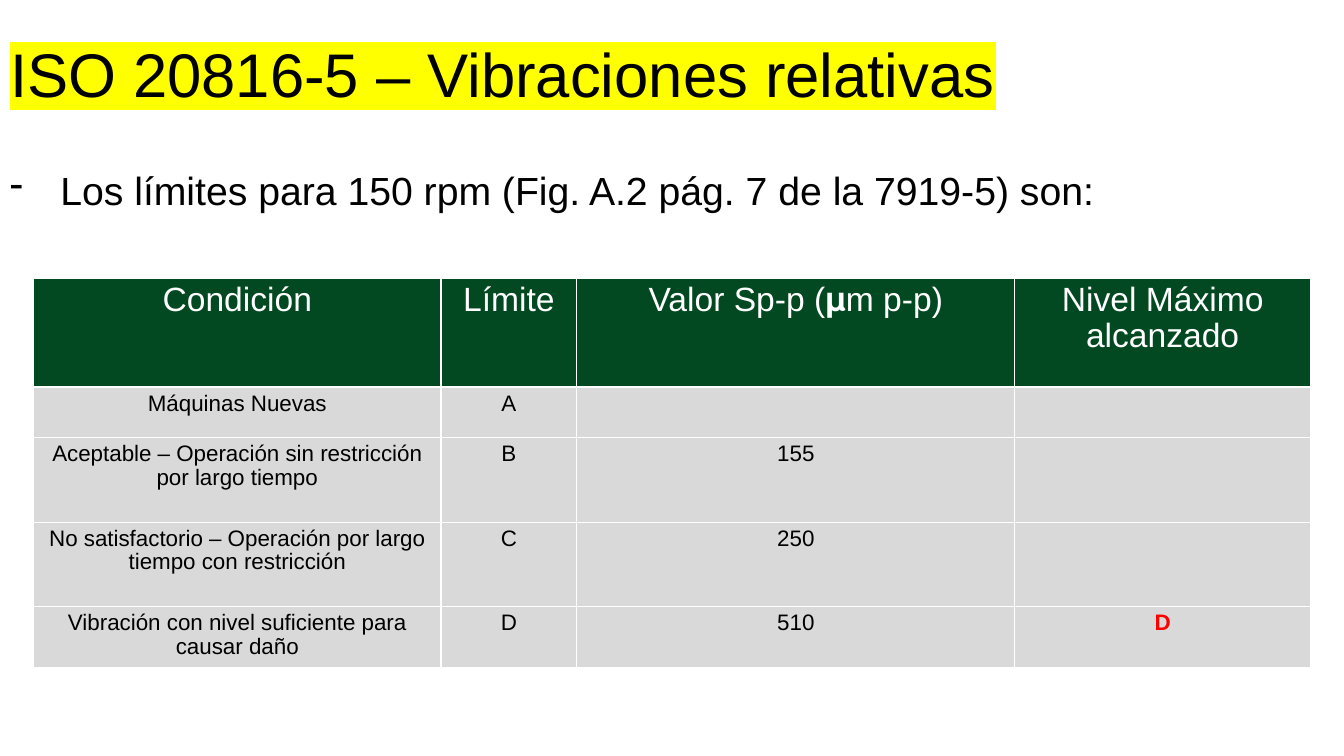
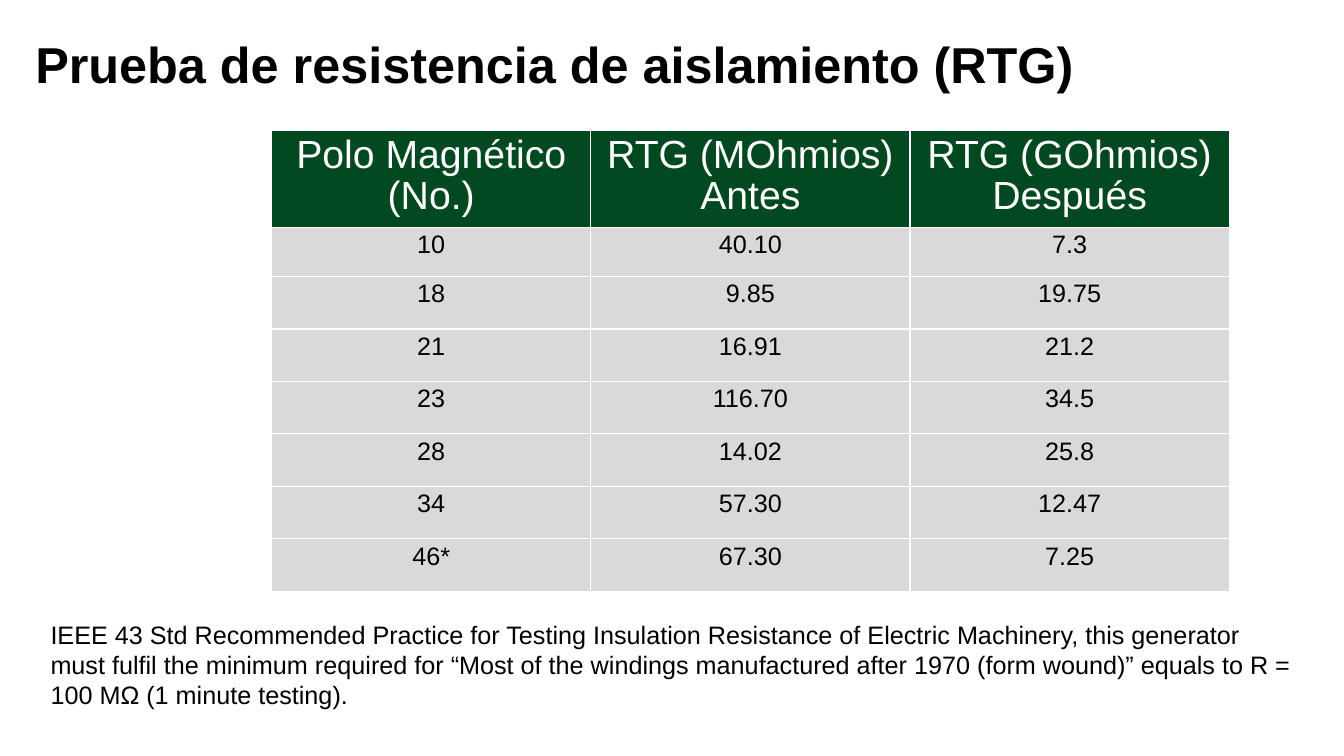
from dataclasses import dataclass

from lxml import etree
from pptx import Presentation
from pptx.dml.color import RGBColor
from pptx.enum import text as t
from pptx.oxml import ns
from pptx.util import Pt


@dataclass(frozen=True)
class Theme:
    font: str = "Arial"
    ink: str = "000000"
    paper: str = "FFFFFF"
    header: str = "024921"
    body: str = "D9D9D9"
    alert: str = "FF0000"
    marker: str = "FFFF00"
    title_size: int = 44
    subtitle_size: int = 36
    lead_size: int = 28
    header_size: int = 24
    note_size: int = 18
    cell_size: int = 16
    border: float = 1


THEME = Theme()


# Text helpers
def add_xml(parent, tag, **attributes):
    return etree.SubElement(parent, ns.qn(tag), attributes)


def style(paragraph, size, color=THEME.ink, bold=False, **formats):
    """Format every run of a paragraph, then the paragraph itself."""
    for run in paragraph.runs:
        for name, value in dict(name=THEME.font, size=Pt(size), bold=bold).items():
            setattr(run.font, name, value)
        run.font.color.rgb = RGBColor.from_string(color)
    for name, value in formats.items():
        setattr(paragraph, name, value)


def place(shape, left, top, width, height):
    for name, value in dict(left=left, top=top, width=width, height=height).items():
        setattr(shape, name, Pt(value))


def add_title(slide, wording, box, size, bold=False, marker=None):
    title = slide.shapes.title
    place(title, *box)
    frame = title.text_frame
    frame.text = wording
    frame.auto_size = t.MSO_AUTO_SIZE.NONE
    frame.vertical_anchor = t.MSO_ANCHOR.MIDDLE
    line = frame.paragraphs[0]
    style(line, size, bold=bold, alignment=t.PP_ALIGN.LEFT)
    if marker:
        fill = line.runs[0].font._element.find(ns.qn("a:solidFill"))
        highlight = etree.Element(ns.qn("a:highlight"))
        add_xml(highlight, "a:srgbClr", val=marker)
        fill.addnext(highlight)


def add_note(slide, wording, box, size, bullet=None, indent=36):
    frame = slide.shapes.add_textbox(*map(Pt, box)).text_frame
    frame.word_wrap = True
    frame.text = wording
    line = frame.paragraphs[0]
    if bullet:
        properties = line._p.get_or_add_pPr()
        properties.set("marL", str(Pt(indent)))
        properties.set("indent", str(-Pt(indent)))
        add_xml(properties, "a:buChar", char=bullet)
    style(line, size)


# Table helpers
def add_borders(cell):
    properties = cell._tc.get_or_add_tcPr()
    for position, side in enumerate(("a:lnL", "a:lnR", "a:lnT", "a:lnB")):
        line = etree.Element(ns.qn(side), w=str(Pt(THEME.border)))
        add_xml(add_xml(line, "a:solidFill"), "a:srgbClr", val=THEME.paper)
        properties.insert(position, line)


def fill_cell(cell, wording, fill, size, color, bold=False):
    cell.fill.solid()
    cell.fill.fore_color.rgb = RGBColor.from_string(fill)
    add_borders(cell)
    cell.text_frame.text = wording
    for line in cell.text_frame.paragraphs:
        style(line, size, color, bold, alignment=t.PP_ALIGN.CENTER, line_spacing=0.95)


def add_grid(slide, corner, widths, heights, rows, header_size, cell_size, alerts=()):
    grid = slide.shapes.add_table(
        len(rows), len(widths), *map(Pt, (*corner, sum(widths), sum(heights)))
    ).table
    for column, width in zip(grid.columns, widths):
        column.width = Pt(width)
    for row, height in zip(grid.rows, heights):
        row.height = Pt(height)
    for r, values in enumerate(rows):
        for c, wording in enumerate(values):
            alert = (r, c) in alerts
            if r == 0:
                look = (THEME.header, header_size, THEME.paper)
            else:
                look = (THEME.body, cell_size, THEME.alert if alert else THEME.ink)
            fill_cell(grid.cell(r, c), wording, *look, bold=alert)


# Slides
def build_vibration(slide):
    add_title(slide, "ISO 20816-5 – Vibraciones relativas", (0, 18, 768, 68),
              THEME.title_size, marker=THEME.marker)
    add_note(slide, "Los límites para 150 rpm (Fig. A.2 pág. 7 de la 7919-5) son:",
             (0, 115, 924, 40), THEME.lead_size, bullet="-")
    limits = [
        ("Condición", "Límite", "Valor Sp-p (𝛍m p-p)", "Nivel Máximo alcanzado"),
        ("Máquinas Nuevas", "A", "", ""),
        ("Aceptable – Operación sin restricción por largo tiempo", "B", "155", ""),
        ("No satisfactorio – Operación por largo tiempo con restricción", "C", "250", ""),
        ("Vibración con nivel suficiente para causar daño", "D", "510", "D"),
    ]
    add_grid(slide, (24, 198.5), (291, 97, 313, 211), (78, 36, 60.5, 60.5, 42.5),
             limits, THEME.header_size, THEME.cell_size, alerts={(4, 3)})


def build_insulation(slide):
    add_title(slide, "Prueba de resistencia de aislamiento (RTG)", (18, 18, 784, 54),
              THEME.subtitle_size, bold=True)
    readings = [
        ("Polo Magnético\n(No.)", "RTG (MOhmios)\nAntes", "RTG (GOhmios)\nDespués"),
        ("10", "40.10", "7.3"),
        ("18", "9.85", "19.75"),
        ("21", "16.91", "21.2"),
        ("23", "116.70", "34.5"),
        ("28", "14.02", "25.8"),
        ("34", "57.30", "12.47"),
        ("46*", "67.30", "7.25"),
    ]
    add_grid(slide, (194, 93), [228] * 3, [69.5, 35] + [37.5] * 6,
             readings, THEME.lead_size, THEME.note_size)
    add_note(slide, "IEEE 43 Std Recommended Practice for Testing Insulation Resistance of "
             "Electric Machinery, this generator must fulfil the minimum required for "
             "“Most of the windings manufactured after 1970 (form wound)” equals to "
             "R = 100 MΩ (1 minute testing).", (29, 438.5, 902, 73), THEME.note_size)


def main():
    deck = Presentation()
    deck.slide_width, deck.slide_height = Pt(960), Pt(540)
    title_only = deck.slide_layouts[5]
    for build in (build_vibration, build_insulation):
        build(deck.slides.add_slide(title_only))
    deck.save("out.pptx")


if __name__ == "__main__":
    main()
